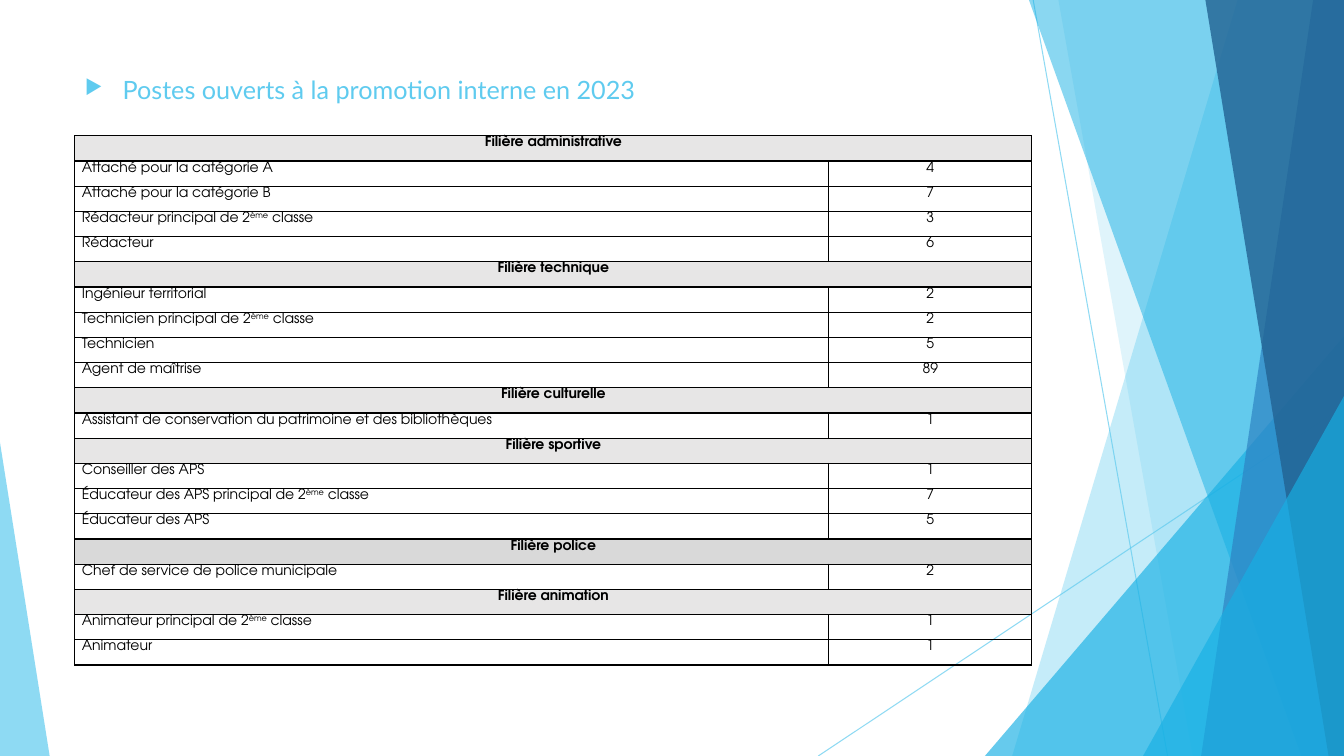
from lxml import etree
from pptx import Presentation
from pptx.dml.color import RGBColor
from pptx.enum.shapes import MSO_CONNECTOR, MSO_SHAPE
from pptx.enum.text import PP_ALIGN
from pptx.oxml.ns import qn
from pptx.util import Pt

LEFT, CENTER = PP_ALIGN.LEFT, PP_ALIGN.CENTER
STRAIGHT, TRIANGLE = MSO_CONNECTOR.STRAIGHT, MSO_SHAPE.ISOSCELES_TRIANGLE

SKY = RGBColor(0x5F, 0xCB, 0xEF)
CYAN = RGBColor(0x17, 0xB0, 0xE4)
BLUE = RGBColor(0x2E, 0x83, 0xC3)
NAVY = RGBColor(0x22, 0x62, 0x92)
BLACK = RGBColor(0, 0, 0)
PALE = RGBColor(0xE7, 0xE6, 0xE6)
GRAY = RGBColor(0xD9, 0xD9, 0xD9)

WIDE, HIGH = 960, 540
SUP = "ème"
TITLE_FONT = {"name": "Lato", "size": Pt(18)}
CELL_FONT = {"name": "TeX Gyre Adventor", "size": Pt(10)}

# Section name, fill, and posts with their counts
SECTIONS = [
    ("Filière administrative", PALE, [
        ("Attaché pour la catégorie A", 4),
        ("Attaché pour la catégorie B", 7),
        ("Rédacteur principal de 2ème classe", 3),
        ("Rédacteur", 6)]),
    ("Filière technique", PALE, [
        ("Ingénieur territorial", 2),
        ("Technicien principal de 2ème classe", 2),
        ("Technicien", 5),
        ("Agent de maîtrise", 89)]),
    ("Filière culturelle", PALE, [
        ("Assistant de conservation du patrimoine et des bibliothèques", 1)]),
    ("Filière sportive", PALE, [
        ("Conseiller des APS", 1),
        ("Éducateur des APS principal de 2ème classe", 7),
        ("Éducateur des APS", 5)]),
    ("Filière police", GRAY, [
        ("Chef de service de police municipale", 2)]),
    ("Filière animation", PALE, [
        ("Animateur principal de 2ème classe", 1),
        ("Animateur", 1)]),
]

# Top and bottom x of each band's left edge, then colour and opacity
BANDS = [
    (884, 723, SKY, 36),
    (756, 852, SKY, 20),
    (735, 929.5, CYAN, 50),
    (938, 858, BLUE, 70),
    (861, 949, NAVY, 80),
]


def add(parent, tag, **attrs):
    return etree.SubElement(parent, qn(tag), attrs)


def fade(part, pct):
    """Set the opacity of the first plain colour in a shape's properties."""
    color = next(part._element.spPr.iter(qn("a:srgbClr")))
    add(color, "a:alpha", val=str(pct * 1000))


def paint(shape, color, pct):
    shape.shadow.inherit = False
    shape.fill.solid()
    shape.fill.fore_color.rgb = color
    shape.line.fill.background()
    fade(shape, pct)


def style(run, color, values):
    for name, value in values.items():
        setattr(run.font, name, value)
    run.font.color.rgb = color


def draw_line(slide, start, end):
    line = slide.shapes.add_connector(STRAIGHT, *map(Pt, start + end))
    line.line.color.rgb = SKY
    line.line.width = Pt(0.75)
    fade(line, 70)
    add(line._element.spPr, "a:effectLst")


def draw_band(slide, top, foot, color, pct):
    """Fill from a slanted left edge to the right edge of the slide."""
    pen = slide.shapes.build_freeform(Pt(top), 0)
    pen.add_line_segments(
        [(Pt(x), Pt(y)) for x, y in ((WIDE, 0), (WIDE, HIGH), (foot, HIGH))])
    paint(pen.convert_to_shape(), color, pct)


def draw_wedge(slide, x, y, width, apex, color, pct):
    """Draw a right triangle standing on the foot of the slide."""
    wedge = slide.shapes.add_shape(
        TRIANGLE, Pt(x), Pt(y), Pt(width), Pt(HIGH - y))
    wedge.adjustments[0] = apex
    paint(wedge, color, pct)


def draw_decor(slide):
    draw_line(slide, (738, 0), (834, HIGH))
    draw_line(slide, (WIDE, 290), (584.5, HIGH))
    for band in BANDS[:2]:
        draw_band(slide, *band)
    draw_wedge(slide, 703.5, 240, WIDE - 703.5, 1, CYAN, 66)
    for band in BANDS[2:]:
        draw_band(slide, *band)
    draw_wedge(slide, 816.5, 283, WIDE - 816.5, 1, CYAN, 66)
    draw_wedge(slide, 0, 316, 35.5, 0, SKY, 70)


def draw_title(slide, x, y, width, height):
    frame = slide.shapes.add_textbox(
        Pt(x), Pt(y), Pt(width), Pt(height)).text_frame
    frame.word_wrap = True
    para = frame.paragraphs[0]
    para.space_before = Pt(10)
    run = para.add_run()
    run.text = "Postes ouverts à la promotion interne en 2023"
    style(run, SKY, TITLE_FONT)
    props = para._p.get_or_add_pPr()
    props.set("marL", str(Pt(27)))
    props.set("indent", str(-Pt(27)))
    add(add(props, "a:buClr"), "a:srgbClr", val=str(SKY))
    add(props, "a:buSzPct", val="80000")
    add(props, "a:buChar", char="▶")


def frame_cell(cell):
    props = cell._tc.get_or_add_tcPr()
    for spot, side in enumerate(("a:lnL", "a:lnR", "a:lnT", "a:lnB")):
        edge = etree.Element(qn(side), w=str(Pt(1)))
        add(add(edge, "a:solidFill"), "a:srgbClr", val=str(BLACK))
        props.insert(spot, edge)


def fill_cell(cell, text, align, bold=False, color=None):
    margins = {"margin_left": Pt(5), "margin_right": Pt(5),
               "margin_top": 0, "margin_bottom": 0}
    for name, value in margins.items():
        setattr(cell, name, value)
    if color is None:
        cell.fill.background()
    else:
        cell.fill.solid()
        cell.fill.fore_color.rgb = color
    para = cell.text_frame.paragraphs[0]
    para.alignment = align
    para.line_spacing = 1.07
    for part in filter(None, text.partition(SUP)):
        run = para.add_run()
        run.text = part
        style(run, BLACK, {**CELL_FONT, "bold": bold})
        if part == SUP:
            run._r.get_or_add_rPr().set("baseline", "30000")


def draw_table(slide, x, y, width, height):
    count = sum(1 + len(posts) for _, _, posts in SECTIONS)
    table = slide.shapes.add_table(
        count, 2, Pt(x), Pt(y), Pt(width), Pt(height)).table
    table.first_row = table.horz_banding = False
    table.columns[0].width = Pt(width - 145)
    table.columns[1].width = Pt(145)
    for row in table.rows:
        row.height = Pt(height / count)
    rows = iter(table.rows)
    for name, color, posts in SECTIONS:
        head, rest = next(rows).cells
        head.merge(rest)
        fill_cell(head, name, CENTER, True, color)
        for post, number in posts:
            label, value = next(rows).cells
            fill_cell(label, post, LEFT)
            fill_cell(value, str(number), CENTER)
    for row in table.rows:
        for cell in row.cells:
            frame_cell(cell)


def main():
    deck = Presentation()
    deck.slide_width, deck.slide_height = Pt(WIDE), Pt(HIGH)
    slide = deck.slides.add_slide(deck.slide_layouts[6])
    draw_decor(slide)
    draw_title(slide, 53.5, 49.5, 677, 425.5)
    draw_table(slide, 53.5, 97, 683.5, 378.5)
    deck.save("out.pptx")


if __name__ == "__main__":
    main()
